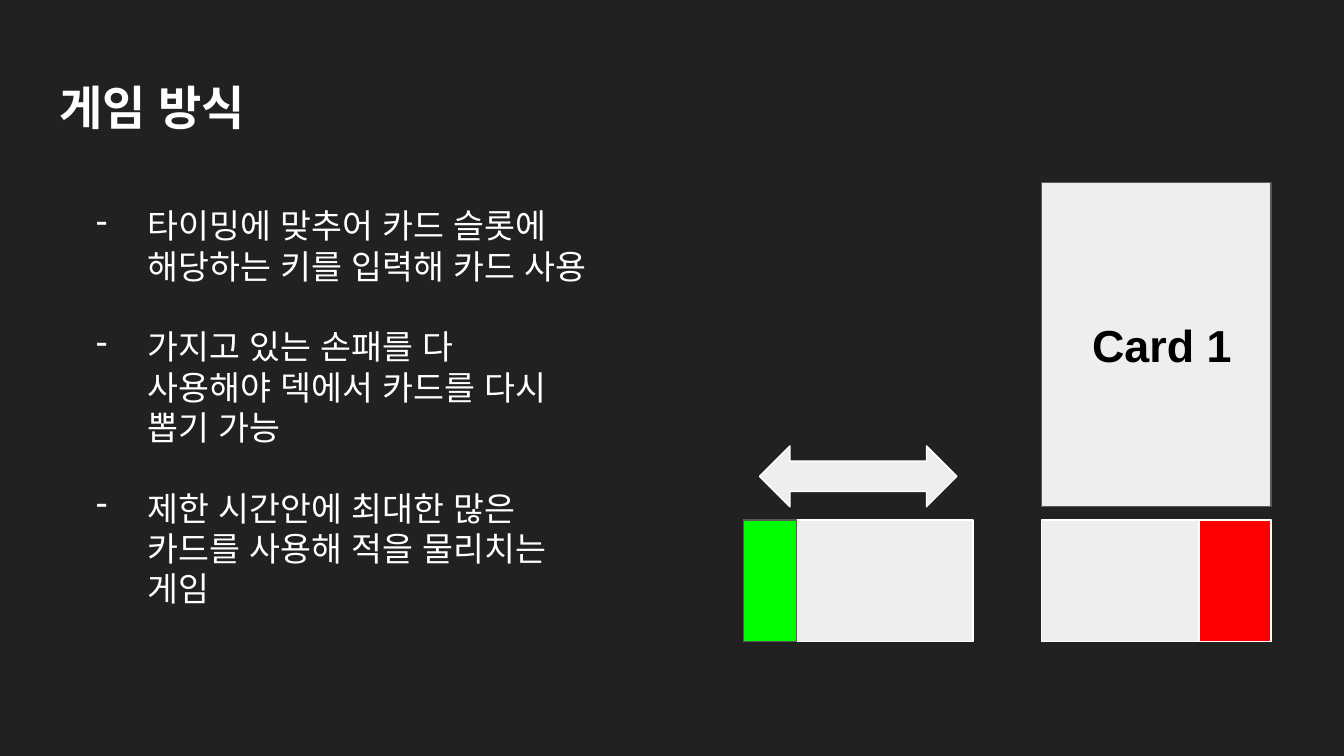
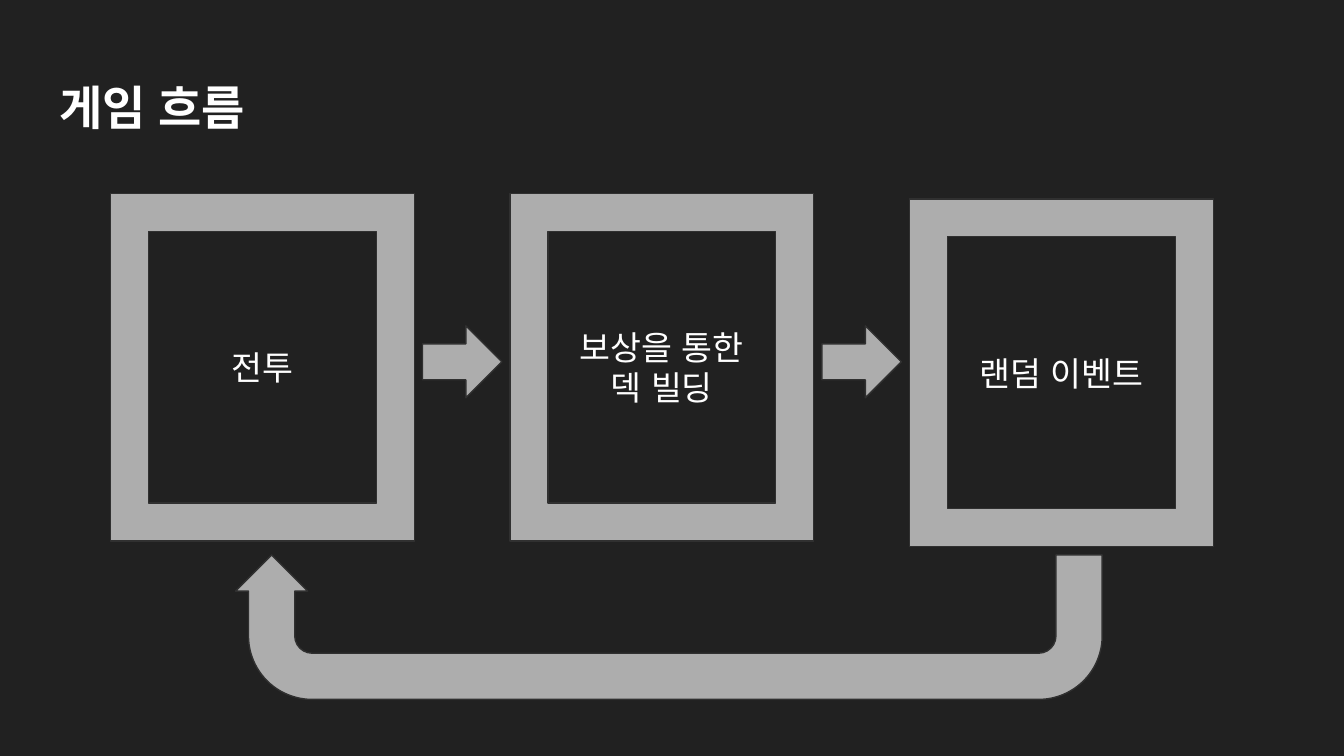
from lxml import etree
from pptx import Presentation
from pptx.dml.color import RGBColor
from pptx.enum.shapes import MSO_SHAPE
from pptx.enum.text import MSO_ANCHOR, PP_ALIGN
from pptx.oxml.ns import qn
from pptx.util import Cm, Pt

RECT, FRAME = MSO_SHAPE.RECTANGLE, MSO_SHAPE.FRAME
RIGHT_ARROW, BOTH_ARROW = MSO_SHAPE.RIGHT_ARROW, MSO_SHAPE.LEFT_RIGHT_ARROW
U_TURN = MSO_SHAPE.U_TURN_ARROW
LEFT, CENTER = PP_ALIGN.LEFT, PP_ALIGN.CENTER
TOP, MIDDLE = MSO_ANCHOR.TOP, MSO_ANCHOR.MIDDLE

NIGHT = RGBColor(0x21, 0x21, 0x21)
WHITE = RGBColor(0xFF, 0xFF, 0xFF)
BLACK = RGBColor(0x00, 0x00, 0x00)
PALE = RGBColor(0xEE, 0xEE, 0xEE)
GRAY = RGBColor(0xAD, 0xAD, 0xAD)
SLATE = RGBColor(0x59, 0x59, 0x59)
CHARCOAL = RGBColor(0x30, 0x30, 0x30)
GREEN = RGBColor(0x00, 0xFF, 0x00)
RED = RGBColor(0xFF, 0x00, 0x00)

FONT = "Arial"
TITLE_SIZE, CARD_SIZE, BODY_SIZE = 25.2, 24, 18
INSET = 0.25

PLAY_TITLE = "게임 방식"
# Each rule is a bullet line followed by any unbulleted lines
RULES = [
    ["타이밍에 맞추어 카드 슬롯에 해당하는 키를 입력해 카드 사용"],
    ["가지고 있는 손패를 다", "사용해야 덱에서 카드를 다시 뽑기 가능"],
    ["제한 시간안에 최대한 많은 카드를 사용해 적을 물리치는 게임"],
]
CARD = "Card 1"

FLOW_TITLE = "게임 흐름"
# Stage name and its top edge in cm
STAGES = [("전투", 3.66), ("보상을 통한 덱 빌딩", 3.66), ("랜덤 이벤트", 3.76)]


def format_runs(paragraph, size, color, bold=False):
    for run in paragraph.runs:
        run.font.name = FONT
        run.font.size = Pt(size)
        run.font.bold = bold
        run.font.color.rgb = color
        east_asian = etree.SubElement(run.font._element, qn("a:ea"))
        east_asian.set("typeface", FONT)


def prepare_frame(frame, anchor):
    frame.word_wrap = True
    frame.vertical_anchor = anchor
    frame.margin_left = frame.margin_right = Cm(INSET)
    frame.margin_top = frame.margin_bottom = Cm(INSET)


def add_text_box(slide, left, top, width, height):
    box = slide.shapes.add_textbox(Cm(left), Cm(top), Cm(width), Cm(height))
    prepare_frame(box.text_frame, TOP)
    return box.text_frame


def add_block(slide, preset, left, top, width, height, fill, line, adjustments=()):
    block = slide.shapes.add_shape(preset, Cm(left), Cm(top), Cm(width), Cm(height))
    block.shadow.inherit = False
    block.fill.solid()
    block.fill.fore_color.rgb = fill
    block.line.color.rgb = line
    block.line.width = Pt(0.75)
    for index, value in enumerate(adjustments):
        block.adjustments[index] = value
    return block


def label_block(block, text, size, color, align, bold=False):
    prepare_frame(block.text_frame, MIDDLE)
    block.text_frame.text = text
    paragraph = block.text_frame.paragraphs[0]
    paragraph.alignment = align
    format_runs(paragraph, size, color, bold)


def indent(paragraph, bulleted):
    properties = paragraph._p.get_or_add_pPr()
    properties.set("marL", str(Cm(1.27)))
    properties.set("indent", str(Cm(-0.97) if bulleted else 0))
    if bulleted:
        bullet_color = etree.SubElement(properties, qn("a:buClr"))
        etree.SubElement(bullet_color, qn("a:srgbClr")).set("val", str(WHITE))
        etree.SubElement(properties, qn("a:buChar")).set("char", "-")


def add_titled_slide(deck, title):
    slide = deck.slides.add_slide(deck.slide_layouts[6])
    slide.background.fill.solid()
    slide.background.fill.fore_color.rgb = NIGHT
    frame = add_text_box(slide, 0.87, 1.24, 23.67, 1.6)
    frame.text = title
    format_runs(frame.paragraphs[0], TITLE_SIZE, WHITE, bold=True)
    return slide


def add_rules(slide):
    frame = add_text_box(slide, 1.27, 3.63, 10.54, 3.71)
    for rule_number, lines in enumerate(RULES):
        for line_number, line in enumerate(lines):
            first_line = line_number == 0
            starts_text = rule_number == 0 and first_line
            paragraph = frame.paragraphs[0] if starts_text else frame.add_paragraph()
            paragraph.text = line
            if first_line and not starts_text:
                paragraph.space_before = Pt(21.6)
            indent(paragraph, bulleted=first_line)
            format_runs(paragraph, BODY_SIZE, WHITE)


def build_play_slide(deck):
    slide = add_titled_slide(deck, PLAY_TITLE)
    slot_width, slot_height, slot_top = 4.34, 2.3, 9.83
    timing_left, card_left = 14.05, 19.68
    green_width, red_width = 1.0, 1.36

    card = add_block(slide, RECT, card_left, 3.45, slot_width, 6.13, PALE, SLATE)
    label_block(card, CARD, CARD_SIZE, BLACK, LEFT, bold=True)
    card.text_frame.margin_left = Cm(0.96)

    red_left = card_left + slot_width - red_width
    for left, width, fill, line in [
        (card_left, slot_width, PALE, WHITE),
        (red_left, red_width, RED, WHITE),
        (timing_left, slot_width, PALE, WHITE),
        (timing_left, green_width, GREEN, SLATE),
    ]:
        add_block(slide, RECT, left, slot_top, width, slot_height, fill, line)

    arrow_width = 3.73
    arrow_left = timing_left + (slot_width - arrow_width) / 2
    add_block(slide, BOTH_ARROW, arrow_left, 8.43, arrow_width, 1.15,
              PALE, WHITE, (0.5, 0.5))
    add_rules(slide)


def build_flow_slide(deck):
    slide = add_titled_slide(deck, FLOW_TITLE)
    first_left, pitch = 2.09, 7.55
    stage_width, stage_height = 5.74, 6.57
    arrow_width, arrow_height = 1.5, 1.36
    arrow_offset = (stage_width + pitch - arrow_width) / 2

    for number, (name, top) in enumerate(STAGES):
        left = first_left + number * pitch
        stage = add_block(slide, FRAME, left, top, stage_width, stage_height,
                          GRAY, CHARCOAL, (0.125,))
        label_block(stage, name, BODY_SIZE, WHITE, CENTER)
        if number < len(STAGES) - 1:
            add_block(slide, RIGHT_ARROW, left + arrow_offset, 6.16,
                      arrow_width, arrow_height, GRAY, CHARCOAL, (0.5, 0.5))

    way_back = add_block(slide, U_TURN, 4.45, 10.49, 16.38, 2.73,
                         GRAY, CHARCOAL, (0.32, 0.25, 0.25, 0.44, 1))
    way_back.rotation = 180


def main():
    deck = Presentation()
    deck.slide_width, deck.slide_height = Cm(25.4), Cm(14.29)
    build_play_slide(deck)
    build_flow_slide(deck)
    deck.save("out.pptx")


if __name__ == "__main__":
    main()
